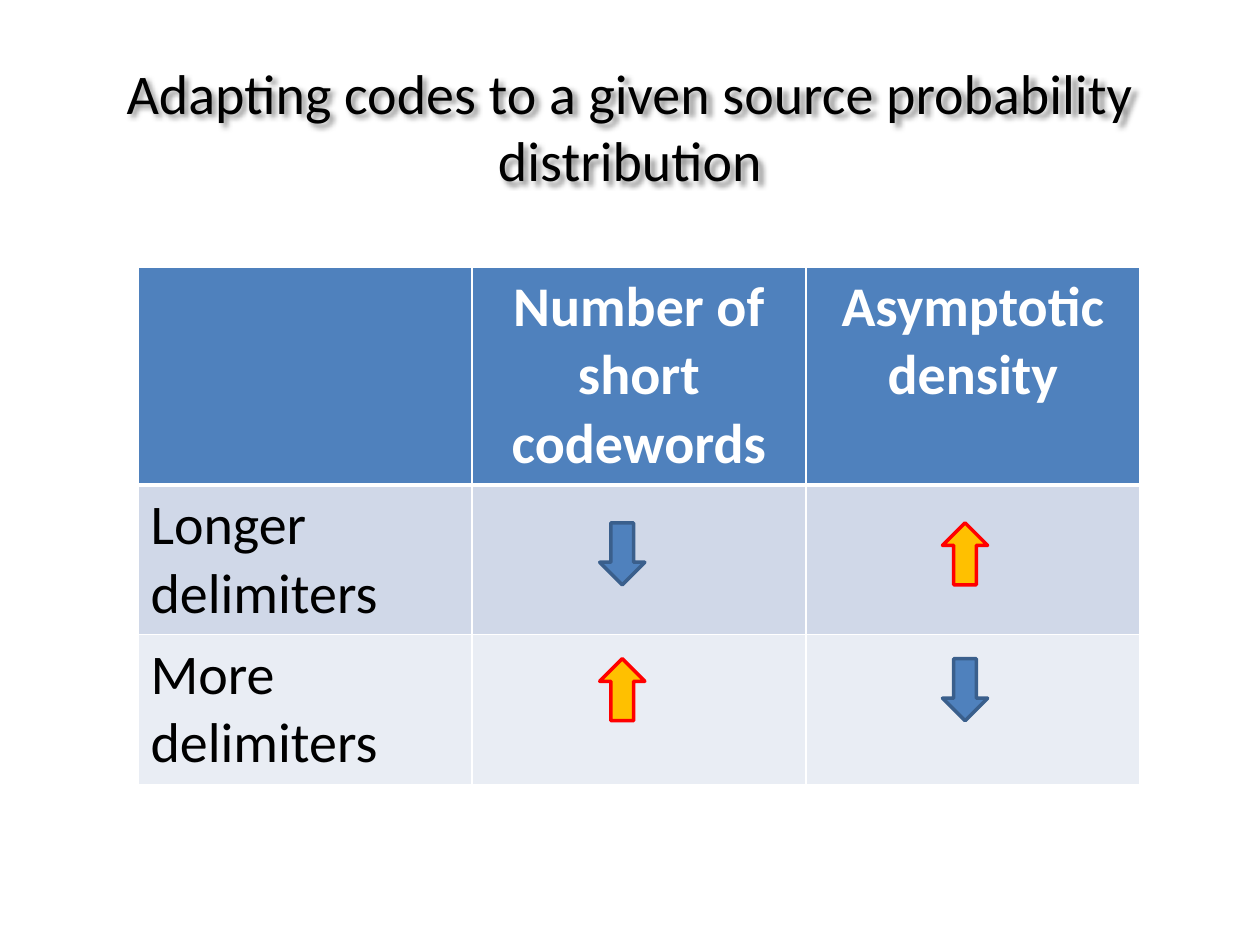
from dataclasses import dataclass

from lxml import etree
from pptx import Presentation
from pptx import util as u
from pptx.dml.color import RGBColor
from pptx.enum import shapes, text
from pptx.oxml import parse_xml
from pptx.oxml.ns import nsdecls, qn


@dataclass(frozen=True)
class Theme:
    font: str = "Calibri"
    size: int = 32
    ink: str = "000000"
    white: str = "FFFFFF"
    blue: str = "4F81BD"
    navy: str = "3A5F8C"
    gold: str = "FFC000"
    red: str = "FF0000"
    bands: tuple = ("D0D8E8", "E9EDF4")


class Deck:
    def __init__(self, theme):
        self.theme = theme
        self.file = Presentation()
        self.file.slide_width, self.file.slide_height = u.Cm(25.4), u.Cm(19.05)
        self.slide = self.file.slides.add_slide(self.file.slide_layouts[5])

    def label(self, frame, words, color, bold=False, align=text.PP_ALIGN.LEFT):
        frame.text = words
        for par in frame.paragraphs:
            par.alignment = align
            for run in par.runs:
                font = run.font
                font.name, font.size = self.theme.font, u.Pt(self.theme.size)
                font.bold = bold
                font.color.rgb = RGBColor.from_string(color)

    def title(self, words, left, top, width, height):
        box = self.slide.shapes.title
        box.left, box.top = u.Cm(left), u.Cm(top)
        box.width, box.height = u.Cm(width), u.Cm(height)
        frame = box.text_frame
        frame.word_wrap = True
        frame.auto_size = text.MSO_AUTO_SIZE.NONE
        frame.vertical_anchor = text.MSO_ANCHOR.MIDDLE
        self.label(frame, words, self.theme.ink, align=text.PP_ALIGN.CENTER)
        # Soft shadow behind the letters
        box._element.spPr.append(parse_xml(
            f'<a:effectLst {nsdecls("a")}><a:outerShdw blurRad="38100" '
            'dist="38100" dir="2700000" algn="tl"><a:srgbClr val="000000">'
            '<a:alpha val="43000"/></a:srgbClr></a:outerShdw></a:effectLst>'))

    def border(self, cell, **widths):
        props = cell._tc.get_or_add_tcPr()
        for side in "LRTB":
            line = etree.SubElement(props, qn(f"a:ln{side}"),
                                    w=str(u.Pt(widths.get(side, 1))))
            fill = etree.SubElement(line, qn("a:solidFill"))
            etree.SubElement(fill, qn("a:srgbClr"), val=self.theme.white)

    def table(self, rows, left, top, width, heights):
        count = len(rows[0])
        grid = self.slide.shapes.add_table(
            len(rows), count, u.Cm(left), u.Cm(top),
            u.Cm(width), u.Cm(sum(heights))).table
        for col in grid.columns:
            col.width = u.Cm(width / count)
        for i, row in enumerate(rows):
            grid.rows[i].height = u.Cm(heights[i])
            head = i == 0
            back = self.theme.blue if head else self.theme.bands[(i - 1) % 2]
            for j, words in enumerate(row):
                cell = grid.cell(i, j)
                self.border(cell, B=3 if head else 1, T=3 if i == 1 else 1)
                cell.fill.solid()
                cell.fill.fore_color.rgb = RGBColor.from_string(back)
                if words:
                    self.label(
                        cell.text_frame, words,
                        self.theme.white if head else self.theme.ink, head,
                        text.PP_ALIGN.CENTER if head else text.PP_ALIGN.LEFT)

    def arrow(self, rising, left, top, width=0.91, height=1.25):
        kind = shapes.MSO_SHAPE
        look = self.theme
        form, fill, edge = ((kind.UP_ARROW, look.gold, look.red) if rising
                            else (kind.DOWN_ARROW, look.blue, look.navy))
        mark = self.slide.shapes.add_shape(
            form, u.Cm(left), u.Cm(top), u.Cm(width), u.Cm(height))
        mark.shadow.inherit = False
        mark.fill.solid()
        mark.fill.fore_color.rgb = RGBColor.from_string(fill)
        mark.line.color.rgb = RGBColor.from_string(edge)
        mark.line.width = u.Pt(2)


def main():
    deck = Deck(Theme())

    # Title
    deck.title("Adapting codes to a given source probability distribution",
               0.79, 1.42, 23.82, 2.21)

    # Effects table
    deck.table([("", "Number of short codewords", "Asymptotic density"),
                ("Longer delimiters", "", ""),
                ("More delimiters", "", "")],
               2.78, 5.38, 20.2, (4.4, 3, 3))

    # Trend arrows: the two rows move in opposite directions
    for i, top in enumerate((10.54, 13.28)):
        for j, left in enumerate((12.09, 19)):
            deck.arrow(i != j, left, top)

    deck.file.save("out.pptx")


if __name__ == "__main__":
    main()
